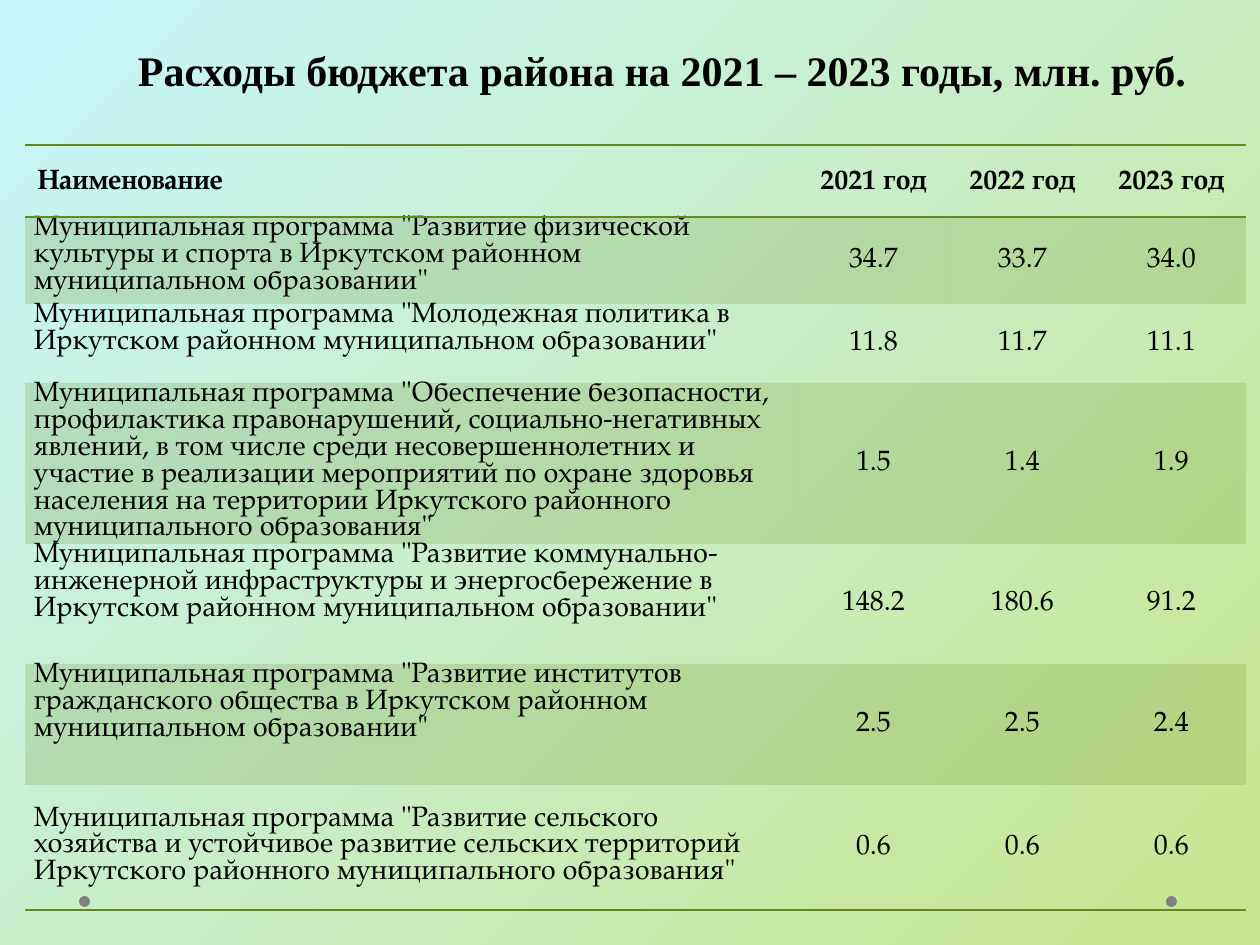
from lxml import etree
from pptx import Presentation, util as u
from pptx.dml.color import RGBColor
from pptx.enum import shapes, text
from pptx.oxml.ns import qn

TITLE = "Расходы бюджета района на 2021 – 2023 годы, млн. руб."
HEADER = ("Наименование", "2021 год", "2022 год", "2023 год")
PROGRAMS = [
    ("Развитие физической культуры и спорта в Иркутском районном "
     "муниципальном образовании", "34.7", "33.7", "34.0"),
    ("Молодежная политика в Иркутском районном муниципальном образовании",
     "11.8", "11.7", "11.1"),
    ("Обеспечение безопасности, профилактика правонарушений, "
     "социально-негативных явлений, в том числе среди несовершеннолетних "
     "и участие в реализации мероприятий по охране здоровья населения на "
     "территории Иркутского районного муниципального образования",
     "1.5", "1.4", "1.9"),
    ("Развитие коммунально-инженерной инфраструктуры и энергосбережение в "
     "Иркутском районном муниципальном образовании", "148.2", "180.6", "91.2"),
    ("Развитие институтов гражданского общества в Иркутском районном "
     "муниципальном образовании", "2.5", "2.5", "2.4"),
    ("Развитие сельского хозяйства и устойчивое развитие сельских территорий "
     "Иркутского районного муниципального образования", "0.6", "0.6", "0.6"),
]
ROWS = [HEADER] + [(f'Муниципальная программа "{name}"', *values)
                   for name, *values in PROGRAMS]
ROW_HEIGHTS = (72, 87, 79, 161, 120, 121, 125)
COLUMN_WIDTHS = (774, 149, 149, 149)
GREEN = "63891F"
NO_STYLE = "{2D5ABB26-0587-4C30-8999-92F81FD0307C}"


def px(length):
    return u.Emu(length * u.Inches(1) // 126)


def color(code):
    return RGBColor.from_string(code)


def style_text(para, font, size, bold):
    for span in para.runs:
        span.font.name = font
        span.font.size = u.Pt(size)
        span.font.bold = bold
        span.font.color.rgb = color("000000")


def set_border(cell, side):
    """Draw a 1 pt line on a side given as an a:tcPr tag: lnT or lnB."""
    line = etree.Element(qn(f"a:{side}"), w=str(u.Pt(1)))
    fill = etree.SubElement(line, qn("a:solidFill"))
    etree.SubElement(fill, qn("a:srgbClr"), val=GREEN)
    properties = cell._tc.get_or_add_tcPr()
    lines_before = len(properties.findall(qn("a:lnT")))
    properties.insert(lines_before, line)


def shade(cell):
    cell.fill.solid()
    cell.fill.fore_color.rgb = color(GREEN)
    tint = cell._tc.tcPr.find(".//" + qn("a:srgbClr"))
    etree.SubElement(tint, qn("a:alpha"), val="20000")


def format_cell(cell, row, column):
    para = cell.text_frame.paragraphs[0]
    is_header, is_name, is_last = row == 0, column == 0, row == len(ROWS) - 1
    style_text(para, "TeX Gyre Pagella", 16, is_header)
    if not is_name:
        para.alignment = text.PP_ALIGN.CENTER
    if is_header:
        para.line_spacing = 1.15
    else:
        if is_name:
            para.line_spacing = u.Pt(15.3)
        side = 9 if is_name else 1
        cell.margin_left = cell.margin_right = px(side)
        cell.margin_top = px(0 if is_name else 1)
        cell.margin_bottom = 0
    if is_header or is_last or not is_name:
        cell.vertical_anchor = text.MSO_ANCHOR.MIDDLE
    if row % 2:
        shade(cell)
    else:
        cell.fill.background()
    if is_header:
        set_border(cell, "lnT")
    if is_header or is_last:
        set_border(cell, "lnB")


deck = Presentation()
deck.slide_width, deck.slide_height = px(1260), px(945)
page = deck.slides.add_slide(deck.slide_layouts[6])

backdrop = page.background.fill
backdrop.gradient()
backdrop.gradient_angle = 315
for stop, code in zip(backdrop.gradient_stops, ("C7F6FB", "C7E68F")):
    stop.color.rgb = color(code)

for left in (1166, 79):
    dot = page.shapes.add_shape(shapes.MSO_SHAPE.OVAL,
                                px(left), px(896), px(11), px(11))
    dot.shadow.inherit = False
    dot.fill.solid()
    dot.fill.fore_color.rgb = color("808080")
    dot.line.fill.background()

title = page.shapes.add_textbox(px(64), px(35), px(1196), px(66)).text_frame
title.word_wrap = True
title.vertical_anchor = text.MSO_ANCHOR.BOTTOM
title.text = TITLE
title.paragraphs[0].alignment = text.PP_ALIGN.CENTER
style_text(title.paragraphs[0], "Times New Roman", 24, True)

budget = page.shapes.add_table(
    len(ROWS), len(HEADER), px(25), px(145),
    px(sum(COLUMN_WIDTHS)), px(sum(ROW_HEIGHTS))).table
budget._tbl.tblPr.find(qn("a:tableStyleId")).text = NO_STYLE
for column, width in zip(budget.columns, COLUMN_WIDTHS):
    column.width = px(width)
for row, height in zip(budget.rows, ROW_HEIGHTS):
    row.height = px(height)
for r, values in enumerate(ROWS):
    for c, value in enumerate(values):
        cell = budget.cell(r, c)
        cell.text = value
        format_cell(cell, r, c)

deck.save("out.pptx")
